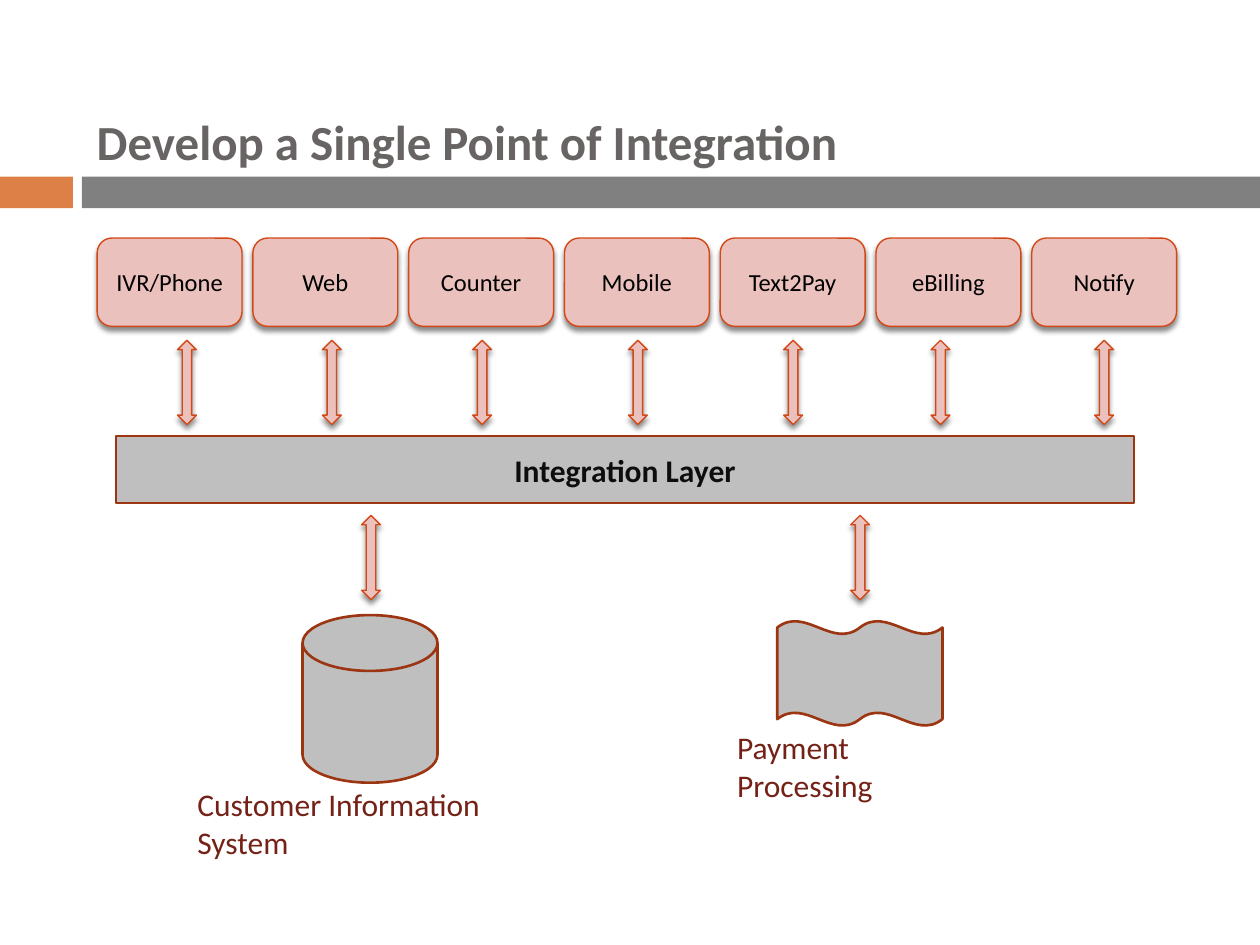
from lxml import etree
from pptx import Presentation
from pptx.dml.color import RGBColor
from pptx.enum.shapes import MSO_SHAPE
from pptx.enum.text import MSO_ANCHOR, PP_ALIGN
from pptx.oxml.ns import qn
from pptx.util import Cm, Pt

RECT, PILL = MSO_SHAPE.RECTANGLE, MSO_SHAPE.ROUNDED_RECTANGLE
ARROW = MSO_SHAPE.UP_DOWN_ARROW
DISK, WAVE = MSO_SHAPE.FLOWCHART_MAGNETIC_DISK, MSO_SHAPE.DOUBLE_WAVE
MIDDLE, TOP = MSO_ANCHOR.MIDDLE, MSO_ANCHOR.TOP
LEFT, CENTER = PP_ALIGN.LEFT, PP_ALIGN.CENTER

ORANGE = RGBColor(0xDD, 0x80, 0x47)
GRAY = RGBColor(0x80, 0x80, 0x80)
SILVER = RGBColor(0xBF, 0xBF, 0xBF)
PINK = RGBColor(0xEA, 0xC1, 0xBD)
RED = RGBColor(0xD3, 0x48, 0x17)
BROWN = RGBColor(0x9C, 0x35, 0x11)
MAROON = RGBColor(0x74, 0x22, 0x17)
SLATE = RGBColor(0x69, 0x64, 0x64)
BLACK = RGBColor(0, 0, 0)
INK = RGBColor(0x0D, 0x0D, 0x0D)

# Content, lengths in cm
TITLE = "Develop a Single Point of Integration"
LAYER = "Integration Layer"
# Channel name, left edge of its arrow
CHANNELS = [("IVR/Phone", 3.58), ("Web", 6.5), ("Counter", 9.53),
            ("Mobile", 12.67), ("Text2Pay", 15.8), ("eBilling", 18.77),
            ("Notify", 22.07)]
# Shape, its box, arrow left, label, label box
SYSTEMS = [
    (DISK, (6.1, 12.4, 2.72, 3.38), 7.29,
     "Customer Information System", (3.73, 15.7, 7.85, 1.02)),
    (WAVE, (15.67, 12.52, 3.33, 2.11), 17.15,
     "Payment Processing", (14.61, 14.55, 5.44, 1.02)),
]
BARS = [(0, 1.47, ORANGE), (1.65, 23.75, GRAY)]

# Formats
TITLE_FONT = {"size": Pt(28), "bold": True}
LAYER_FONT = {"size": Pt(18), "bold": True}
NAME_FONT = {"size": Pt(14)}
LABEL_FONT = {"size": Pt(18)}
SOFT = {"fill": PINK, "line": RED, "width": 0.79, "shade": True}
SOLID = {"fill": SILVER, "line": BROWN, "width": 1.5}

deck = Presentation()
deck.slide_width, deck.slide_height = Cm(25.4), Cm(19.05)
slide = deck.slides.add_slide(deck.slide_layouts[6])


def cast(shape):
    """Add a soft shadow that falls straight down."""
    effects = shape._element.spPr.find(qn("a:effectLst"))
    outer = etree.SubElement(effects, qn("a:outerShdw"), blurRad="38100",
                             dist="30000", dir="5400000", rotWithShape="0")
    color = etree.SubElement(outer, qn("a:srgbClr"), val="000000")
    etree.SubElement(color, qn("a:alpha"), val="45000")


def draw(kind, box, fill, line=None, width=0, shade=False):
    shape = slide.shapes.add_shape(kind, *map(Cm, box))
    shape.shadow.inherit = False
    shape.fill.solid()
    shape.fill.fore_color.rgb = fill
    if line is None:
        shape.line.fill.background()
    else:
        shape.line.color.rgb = line
        shape.line.width = Pt(width)
    if shade:
        cast(shape)
    return shape


def write(shape, text, color, font, align=LEFT, anchor=TOP):
    frame = shape.text_frame
    frame.word_wrap = True
    frame.vertical_anchor = anchor
    para = frame.paragraphs[0]
    para.alignment = align
    run = para.add_run()
    run.text = text
    run.font.name = "Calibri"
    run.font.color.rgb = color
    for key, value in font.items():
        setattr(run.font, key, value)


def label(box, *args, **kwargs):
    write(slide.shapes.add_textbox(*map(Cm, box)), *args, **kwargs)


def arrow(left, top):
    draw(ARROW, (left, top, 0.38, 1.7), **SOFT)


# Title and header bars
for left, wide, color in BARS:
    draw(RECT, (left, 3.56, wide, 0.64), color)
label((1.7, 2.11, 23.7, 1.47), TITLE, SLATE, TITLE_FONT, anchor=MIDDLE)

# Channels in an even row
for i, (name, left) in enumerate(CHANNELS):
    pill = draw(PILL, (1.96 + 3.14 * i, 4.8, 2.92, 1.78), **SOFT)
    write(pill, name, BLACK, NAME_FONT, CENTER, MIDDLE)
    arrow(left, 6.86)

# Integration layer
band = draw(RECT, (2.34, 8.79, 20.52, 1.35), **SOLID)
write(band, LAYER, INK, LAYER_FONT, CENTER, MIDDLE)

# Systems below the layer
for kind, box, left, text, place in SYSTEMS:
    arrow(left, 10.39)
    draw(kind, box, **SOLID)
    label(place, text, MAROON, LABEL_FONT)

deck.save("out.pptx")
